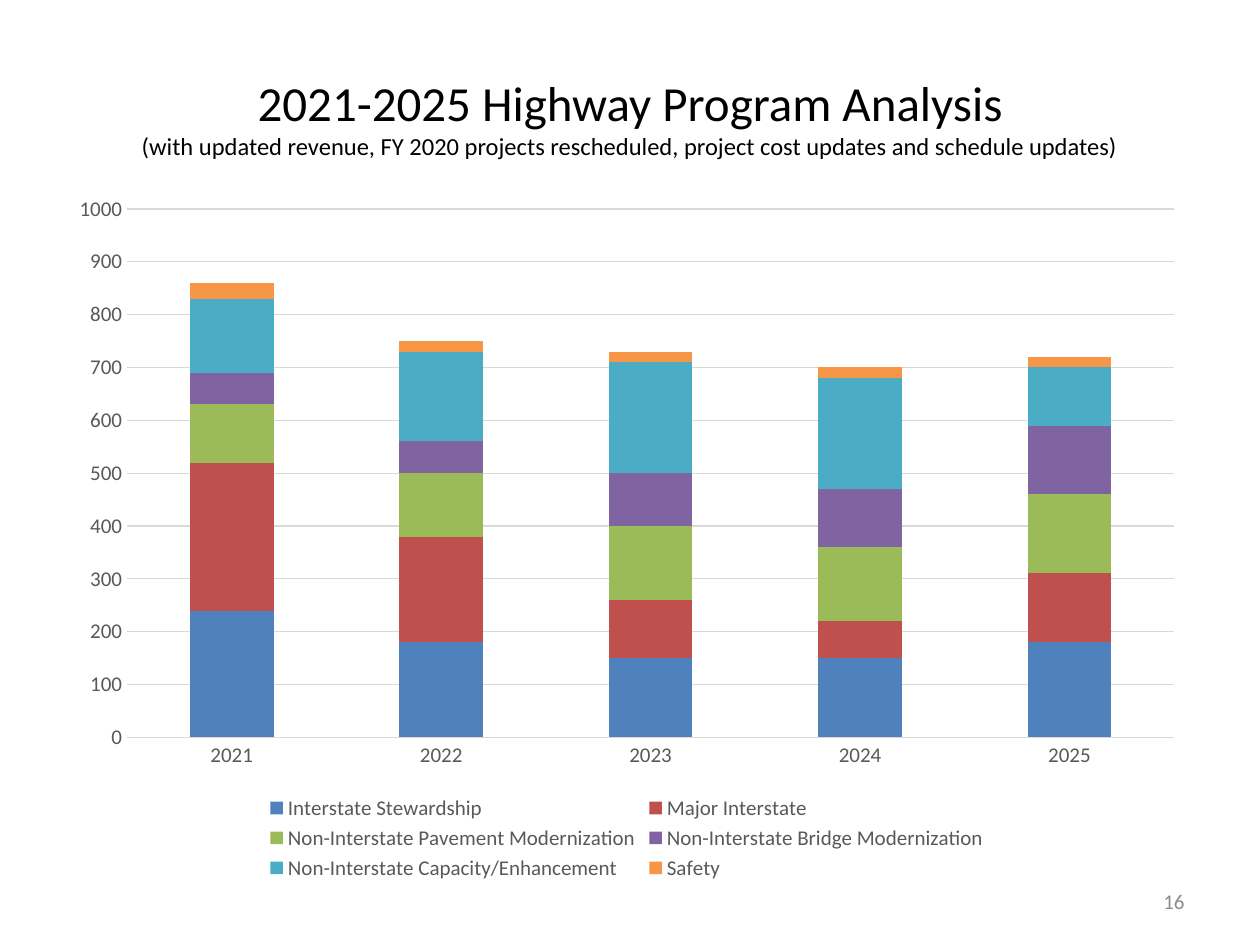
from dataclasses import dataclass

from lxml import etree
from pptx import Presentation
from pptx import util as u
from pptx.chart.data import CategoryChartData
from pptx.dml.color import RGBColor
from pptx.enum import chart as ch, text

WIDTH, HEIGHT = u.Inches(10), u.Inches(7.5)


@dataclass(frozen=True)
class Theme:
    font: str = "Calibri"
    ink: str = "000000"
    label: str = "595959"
    number: str = "8C8C8C"
    grid: str = "D9D9D9"
    title_size: int = 28
    subtitle_size: int = 14
    label_size: int = 12


THEME = Theme()

YEARS = ["2021", "2022", "2023", "2024", "2025"]
PROGRAMS = [
    ("Interstate Stewardship", "4F81BD", (240, 180, 150, 150, 180)),
    ("Major Interstate", "C0504D", (280, 200, 110, 70, 130)),
    ("Non-Interstate Pavement Modernization", "9BBB59", (110, 120, 140, 140, 150)),
    ("Non-Interstate Bridge Modernization", "8064A2", (60, 60, 100, 110, 130)),
    ("Non-Interstate Capacity/Enhancement", "4BACC6", (140, 170, 210, 210, 110)),
    ("Safety", "F79646", (30, 20, 20, 20, 20)),
]


def set_all(target, **values):
    for name, value in values.items():
        setattr(target, name, value)


def area(left, top, width, height):
    """Turn shares of the slide's size into lengths."""
    return dict(left=int(left * WIDTH), top=int(top * HEIGHT),
                width=int(width * WIDTH), height=int(height * HEIGHT))


def style_font(font, size, color):
    set_all(font, name=THEME.font, size=u.Pt(size), bold=False)
    font.color.rgb = RGBColor.from_string(color)


def style_line(line):
    line.width = u.Pt(0.75)
    line.color.rgb = RGBColor.from_string(THEME.grid)


def add_span(para, words, size, color):
    span = para.add_run()
    span.text = words
    style_font(span.font, size, color)


def add_title(page, heading, subtitle):
    title = page.shapes.title
    set_all(title, **area(0.05, 0.04, 0.9, 1 / 6))
    set_all(title.text_frame, word_wrap=True, auto_size=text.MSO_AUTO_SIZE.NONE,
            vertical_anchor=text.MSO_ANCHOR.MIDDLE)
    para = title.text_frame.paragraphs[0]
    para.alignment = text.PP_ALIGN.CENTER
    add_span(para, heading, THEME.title_size, THEME.ink)
    para.add_line_break()
    add_span(para, subtitle, THEME.subtitle_size, THEME.ink)


def style_axes(chart):
    years, amounts = chart.category_axis, chart.value_axis
    for axis in (years, amounts):
        set_all(axis, major_tick_mark=ch.XL_TICK_MARK.NONE,
                minor_tick_mark=ch.XL_TICK_MARK.NONE)
        style_font(axis.tick_labels.font, THEME.label_size, THEME.label)
    style_line(years.format.line)
    set_all(amounts, minimum_scale=0, maximum_scale=1000, major_unit=100,
            has_major_gridlines=True)
    style_line(amounts.major_gridlines.format.line)
    amounts.format.line.fill.background()


def add_program_chart(page):
    data = CategoryChartData(number_format="General")
    data.categories = YEARS
    for name, _, values in PROGRAMS:
        data.add_series(name, values)
    frame = page.shapes.add_chart(ch.XL_CHART_TYPE.COLUMN_STACKED,
                                  *area(0.045, 0.193, 0.905, 0.744).values(), data)
    chart = frame.chart
    set_all(chart, has_title=False, has_legend=True)
    style_font(chart.font, 10, THEME.ink)
    set_all(chart.legend, position=ch.XL_LEGEND_POSITION.BOTTOM, include_in_layout=False)
    style_font(chart.legend.font, THEME.label_size, THEME.label)
    style_axes(chart)
    plot = chart.plots[0]
    set_all(plot, gap_width=150, overlap=100, vary_by_categories=False)
    for series, (_, color, _) in zip(plot.series, PROGRAMS):
        series.format.fill.solid()
        series.format.fill.fore_color.rgb = RGBColor.from_string(color)


def add_page_number(page, number):
    box = page.shapes.add_textbox(*area(0.717, 0.927, 0.233, 0.053).values())
    set_all(box.text_frame, word_wrap=True, vertical_anchor=text.MSO_ANCHOR.MIDDLE)
    para = box.text_frame.paragraphs[0]
    para.alignment = text.PP_ALIGN.RIGHT
    add_span(para, number, THEME.label_size, THEME.number)


def main():
    deck = Presentation()
    set_all(deck, slide_width=WIDTH, slide_height=HEIGHT)
    page = deck.slides.add_slide(deck.slide_layouts.get_by_name("Title Only"))
    add_title(page, "2021-2025 Highway Program Analysis",
              "(with updated revenue, FY 2020 projects rescheduled, "
              "project cost updates and schedule updates)")
    add_program_chart(page)
    add_page_number(page, "16")
    deck.save("out.pptx")


if __name__ == "__main__":
    main()
